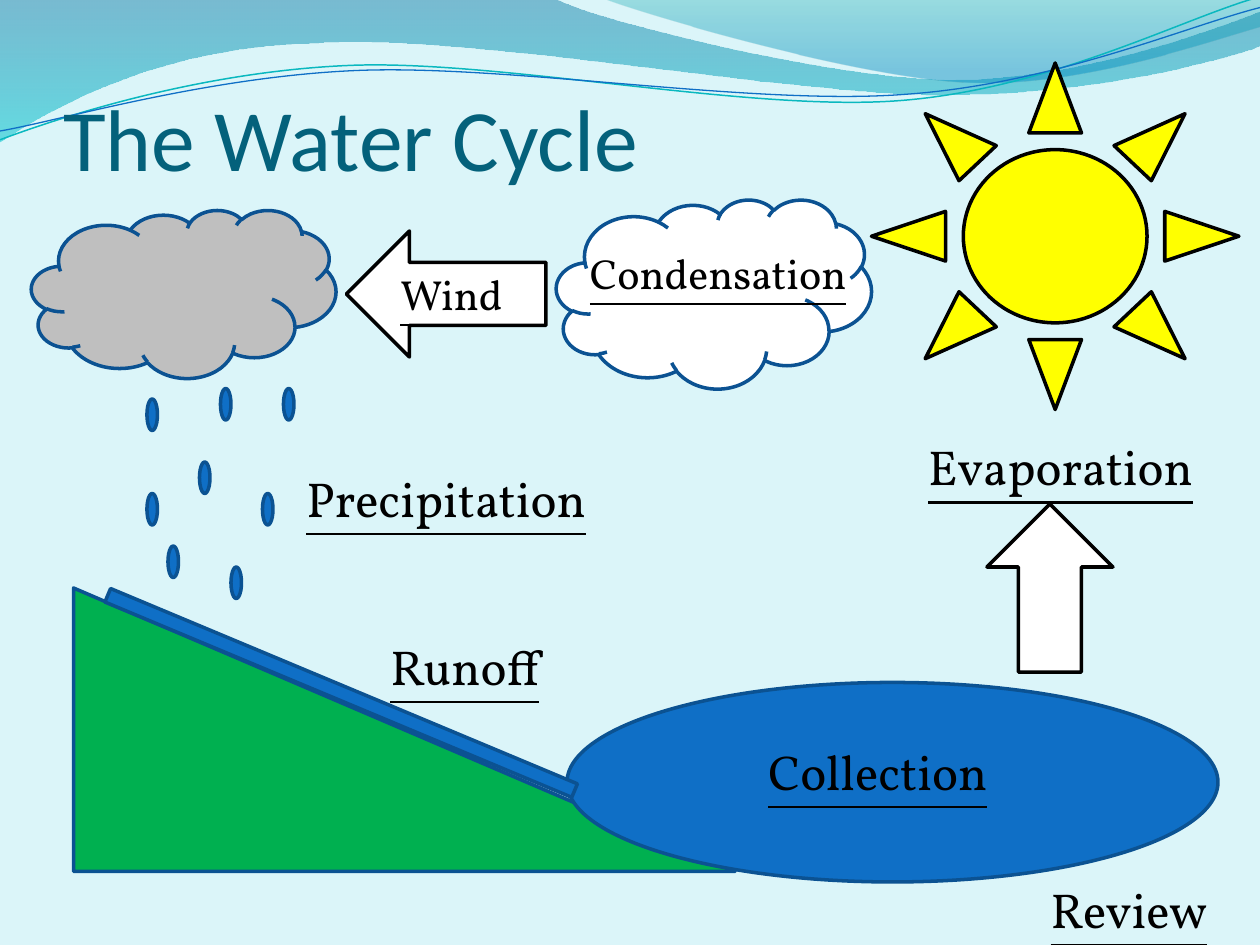
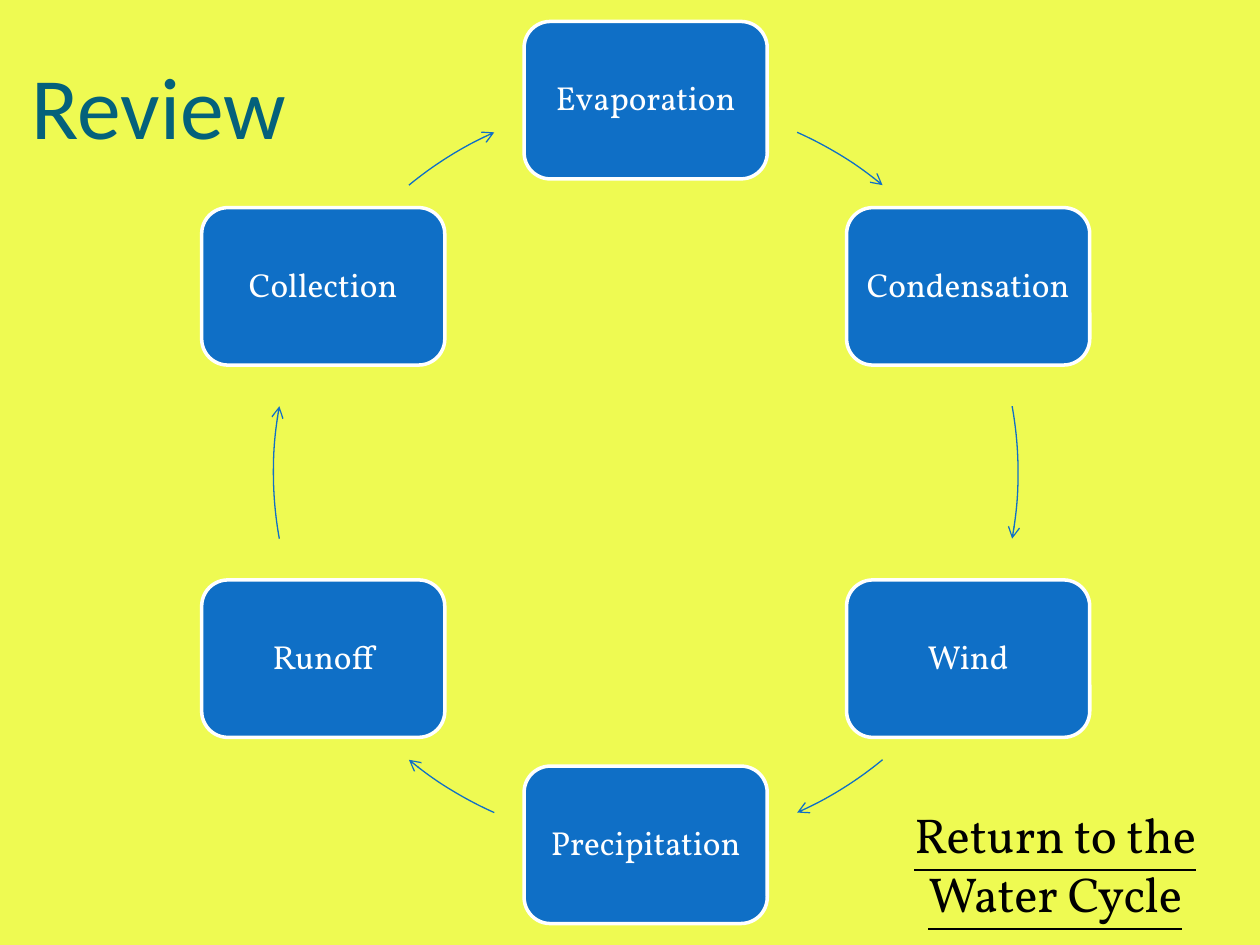
from math import cos, sin, radians
from lxml.etree import SubElement as Sub
from pptx import Presentation
from pptx.dml.color import RGBColor as Rgb
from pptx.enum.shapes import MSO_SHAPE as Kind
from pptx.enum.text import MSO_ANCHOR as Anchor, MSO_AUTO_SIZE as Fit, PP_ALIGN as Align
from pptx.oxml.ns import qn
from pptx.util import Inches, Pt

HUES = {
    "sky": "DBF5F9", "lime": "EEFA52", "title": "04617B", "water": "0F6FC6",
    "edge": "0B5292", "teal": "0AB8BF", "black": "000000", "white": "FFFFFF",
    "sun": "FFFF00", "hill": "00B050", "storm": "BFBFBF",
}
HEAD = {"name": "Calibri", "size": Pt(50), "bold": False}
LINK = {"name": "Vollkorn", "size": Pt(28), "underline": True}
SMALL = {**LINK, "size": Pt(24)}
NODE = {"name": "Vollkorn", "size": Pt(19)}
GRID = 12  # scenery and labels are placed in twelfths of an inch


def style(shape, fill, edge, width=2):
    """Set fill and outline; None leaves that part empty."""
    shape.shadow.inherit = False
    for part, hue in ((shape.fill, fill), (shape.line.fill, edge)):
        if hue:
            part.solid()
            part.fore_color.rgb = Rgb.from_string(HUES[hue])
        else:
            part.background()
    if edge:
        shape.line.width = Pt(width)


def write(frame, text, look, hue, align=Align.LEFT):
    frame.word_wrap = True
    para = frame.paragraphs[0]
    para.alignment = align
    run = para.add_run()
    run.text = text
    for key, value in look.items():
        setattr(run.font, key, value)
    run.font.color.rgb = Rgb.from_string(HUES[hue])


deck = Presentation()
deck.slide_width, deck.slide_height = Inches(10), Inches(7.5)

# Slides with background and title
pages = []
for text, back, box in (
    ("The Water Cycle", "sky", (0.5, 0.25, 8.17, 1.25)),
    ("Review", "lime", (0.25, 0, 9.08, 1.25)),
):
    page = deck.slides.add_slide(deck.slide_layouts[5])
    page.background.fill.solid()
    page.background.fill.fore_color.rgb = Rgb.from_string(HUES[back])
    title = page.shapes.title
    title.left, title.top, title.width, title.height = map(Inches, box)
    frame = title.text_frame
    frame.auto_size = Fit.NONE
    frame.vertical_anchor = Anchor.BOTTOM
    frame.margin_left = frame.margin_right = frame.margin_bottom = 0
    frame.margin_top = Inches(0.05)
    write(frame, text, HEAD, "title")
    pages.append(page)
cycle, review = pages

# Waves: pieces of Bezier points, then gradient stops (position, colour, opacity) or a line
waves = [
    ([[(0, 0)],
      [(4.4, -0.01), (4.76, 0.17), (6.64, 0.63), (7.58, 0.63),
       (8.53, 0.63), (9.58, 0.26), (10, 0.09)],
      [(10.01, 0.36), (9.83, 0.44), (8.7, 0.76), (7.46, 0.75), (6.22, 0.75),
       (3.82, 0.28), (2.57, 0.34), (1.29, 0.36), (0.46, 0.83), (-0.01, 1.13)]],
     [(0, "0074A1", 45), (100, "00C6CF", 55)], None),
    ([[(4.79, -0.01), (5.09, 0.11), (6.82, 0.62), (7.69, 0.65),
       (8.56, 0.69), (9.61, 0.32), (10, 0.21)],
      [(10, 0)]],
     [(0, "00A1A9", 30), (80, "008BBF", 45)], None),
    ([[(0, 1.11), (0.48, 0.93), (1.58, 0.57), (2.77, 0.52), (3.95, 0.47),
       (5.93, 0.89), (7.13, 0.8), (8.33, 0.71), (9.38, 0.15), (9.98, -0.02)]],
     None, ("teal", 0.85)),
    ([[(0, 1.04), (0.47, 0.96), (1.64, 0.61), (2.83, 0.56), (4.03, 0.51),
       (5.97, 0.84), (7.17, 0.75), (8.36, 0.67), (9.41, 0.21), (10, 0.06)]],
     None, ("water", 0.75)),
]
for pieces, stops, line in waves:
    dots = [(Inches(x), Inches(y)) for piece in pieces for x, y in piece]
    pen = cycle.shapes.build_freeform(*dots[0])
    pen.add_line_segments(dots[1:], close=bool(stops))
    wave = pen.convert_to_shape()
    style(wave, None, *(line or (None,)))

    # Join each three points after the first of a piece into one curve
    route = next(wave.element.iter(qn("a:path")))
    nodes = list(route)
    first = 0
    for piece in pieces:
        for i in range(first + 1, first + len(piece), 3):
            curve = route.makeelement(qn("a:cubicBezTo"))
            nodes[i].addprevious(curve)
            for node in nodes[i:i + 3]:
                curve.append(node[0])
                route.remove(node)
        first += len(piece)

    if stops:
        wave.fill.gradient()
        wave.fill.gradient_angle = 270
        for stop, (_, color, _) in zip(wave.fill.gradient_stops, stops):
            stop.color.rgb = Rgb.from_string(color)
        for node, (place, _, alpha) in zip(wave.element.iter(qn("a:gs")), stops):
            node.set("pos", str(place * 1000))
            Sub(node[0], qn("a:alpha"), val=str(alpha * 1000))

# The title stands in front of the waves
head = cycle.shapes.title.element
head.getparent().append(head)

# Scenery
drops = [(14, 38), (21, 37), (27, 37), (14, 47), (25, 47), (16, 52), (19, 44), (22, 54)]
scene = [
    (Kind.CLOUD, (53, 19, 30, 18), "white", "edge", 0),
    (Kind.SUN, (83, 6, 35, 33), "sun", "black", 0),
    (Kind.RIGHT_TRIANGLE, (7, 56, 63, 27), "hill", "edge", 0),
    (Kind.CLOUD, (3, 20, 29, 16), "storm", "edge", 0),
    (Kind.OVAL, (54, 65, 62, 19), "water", "edge", 0),
    (Kind.LEFT_ARROW, (33, 22, 19, 12), "white", "black", 0),
    *((Kind.OVAL, (x, y, 1, 3), "water", "edge", 0) for x, y in drops),
    (Kind.RECTANGLE, (8.4, 65.3, 48.2, 1.4), "water", "edge", 22.7),
    (Kind.UP_ARROW, (94, 48, 12, 16), "white", "black", 0),
]
for kind, box, fill, edge, turn in scene:
    shape = cycle.shapes.add_shape(kind, *(Inches(n / GRID) for n in box))
    style(shape, fill, edge)
    shape.rotation = turn

# Labels
labels = [
    (cycle, "Wind", (33, 25, 20, 6), SMALL, Align.CENTER),
    (cycle, "Condensation", (55, 23, 28, 6), SMALL, Align.LEFT),
    (cycle, "Precipitation", (28, 44, 30, 6.86), LINK, Align.LEFT),
    (cycle, "Runoff", (36, 60, 18, 6.86), LINK, Align.LEFT),
    (cycle, "Collection", (72, 70, 33, 6.86), LINK, Align.LEFT),
    (cycle, "Review", (95, 83.14, 25, 6.86), LINK, Align.CENTER),
    (cycle, "Evaporation", (85, 41, 32, 6.86), LINK, Align.CENTER),
    (review, "Return to the Water Cycle", (81, 76, 39, 12.5), LINK, Align.CENTER),
]
for page, text, box, look, align in labels:
    frame = page.shapes.add_textbox(*(Inches(n / GRID) for n in box)).text_frame
    write(frame, text, look, "black", align)
    frame.auto_size = Fit.SHAPE_TO_FIT_TEXT

# Ring of stages, clockwise from the top
MID_X, MID_Y, RADIUS = 5.125, 3.75, 2.955
WIDE, HIGH = 1.93, 1.25
stages = ["Evaporation", "Condensation", "Wind", "Precipitation", "Runoff", "Collection"]
arcs = [(301.75, 15.5), (0, 20.5), (58.25, 15.5), (121.75, 15.5), (180, 20.5), (238.25, 15.5)]
for i, (text, (mid, span)) in enumerate(zip(stages, arcs)):
    turn = radians(60 * i - 90)
    x, y = MID_X + RADIUS * cos(turn), MID_Y + RADIUS * sin(turn)
    box = (x - WIDE / 2, y - HIGH / 2, WIDE, HIGH)
    node = review.shapes.add_shape(Kind.ROUNDED_RECTANGLE, *map(Inches, box))
    style(node, "water", "white")
    frame = node.text_frame
    frame.vertical_anchor = Anchor.MIDDLE
    frame.margin_left = frame.margin_right = Inches(0.08)
    write(frame, text, NODE, "white", Align.CENTER)
    frame.paragraphs[0].line_spacing = 0.9

    box = (MID_X - RADIUS, MID_Y - RADIUS, 2 * RADIUS, 2 * RADIUS)
    arc = review.shapes.add_shape(Kind.ARC, *map(Inches, box))
    style(arc, None, "water", 0.75)
    for side, angle in enumerate((mid - span / 2, mid + span / 2)):
        arc.adjustments[side] = angle % 360 * 0.6  # 60000 units a degree, in 100000ths
    Sub(arc.element.spPr.find(qn("a:ln")), qn("a:tailEnd"), type="arrow")

deck.save("out.pptx")
